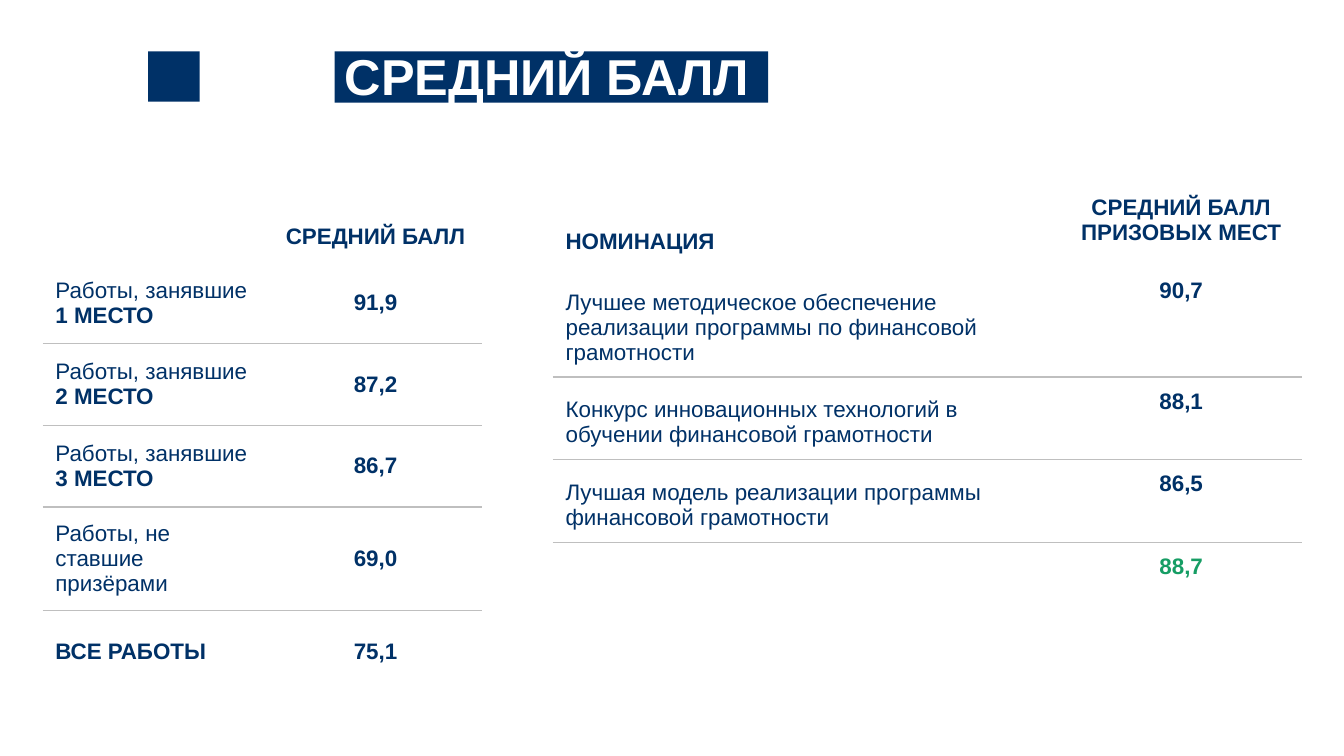
from lxml import etree
from pptx import Presentation
from pptx.dml.color import RGBColor
from pptx.enum import shapes, text
from pptx.oxml import ns
from pptx.util import Inches, Pt

NAVY, GREEN, GREY, WHITE = "003167", "169D64", "BFBFBF", "FFFFFF"
MID, LOW, TOP = text.MSO_ANCHOR.MIDDLE, text.MSO_ANCHOR.BOTTOM, text.MSO_ANCHOR.TOP

PLACES = [
    ("", "СРЕДНИЙ БАЛЛ"),
    ("Работы, занявшие \v1 МЕСТО", "91,9"),
    ("Работы, занявшие \v2 МЕСТО", "87,2"),
    ("Работы, занявшие \v3 МЕСТО", "86,7"),
    ("Работы, не ставшие призёрами", "69,0"),
    ("ВСЕ РАБОТЫ", "75,1"),
]
PRIZES = [
    ("НОМИНАЦИЯ", "СРЕДНИЙ БАЛЛ ПРИЗОВЫХ МЕСТ"),
    ("Лучшее методическое обеспечение реализации программы по финансовой грамотности", "90,7"),
    ("Конкурс инновационных технологий в обучении финансовой грамотности", "88,1"),
    ("Лучшая модель реализации программы финансовой грамотности", "86,5"),
    ("", "88,7"),
]


def color(code):
    return RGBColor.from_string(code)


def style(run, size, code, bold):
    font = run.font
    font.name, font.size, font.bold = "Arial", Pt(size), bold
    font.color.rgb = color(code)


def block(slide, box, code):
    """Add a plain filled rectangle."""
    shape = slide.shapes.add_shape(shapes.MSO_SHAPE.RECTANGLE, *map(Inches, box))
    shape.shadow.inherit = False
    shape.fill.solid()
    shape.fill.fore_color.rgb = color(code)
    shape.line.fill.background()
    return shape


def header(slide, left, top):
    block(slide, (left, top, 0.51, 0.5), NAVY)
    title = block(slide, (left + 1.85, top, 4.3, 0.51), NAVY)
    frame = title.text_frame
    frame.text = "СРЕДНИЙ БАЛЛ"
    frame.word_wrap = True
    frame.vertical_anchor = MID
    frame.margin_left = frame.margin_right = Inches(0.1)
    frame.margin_top, frame.margin_bottom = Inches(0.04), 0
    par = frame.paragraphs[0]
    par.alignment = text.PP_ALIGN.LEFT
    par.line_spacing = 0.9
    style(par.runs[0], 36, WHITE, True)


def border(cell, sides):
    """Draw top and bottom edges, given as a tag-to-colour mapping."""
    props = cell._tc.get_or_add_tcPr()
    for spot, (tag, code) in enumerate(sides.items()):
        line = etree.Element(ns.qn("a:" + tag), w=str(Pt(1)))
        fill = etree.SubElement(line, ns.qn("a:solidFill"))
        etree.SubElement(fill, ns.qn("a:srgbClr"), val=code)
        props.insert(spot, line)


def fill_cell(cell, words, anchor, align, code, bold):
    """Write a cell; the part after a line break is always bold."""
    cell.text = words
    cell.vertical_anchor = anchor
    cell.margin_left = cell.margin_right = Inches(0.12)
    cell.margin_top = cell.margin_bottom = Inches(0.12)
    par = cell.text_frame.paragraphs[0]
    par.alignment = align
    for spot, run in enumerate(par.runs):
        style(run, 16, code, bold or spot > 0)


def scores(slide, left, top, widths, heights, rows, anchors, strong, last):
    """Add a two-column table; strong holds the rows with bold labels,
    last is the colour of the final score."""
    count = len(rows)
    frame = slide.shapes.add_table(count, 2, Inches(left), Inches(top),
                                   Inches(sum(widths)), Inches(sum(heights)))
    table = frame.table
    table.first_row = table.horz_banding = False
    for col, width in zip(table.columns, widths):
        col.width = Inches(width)
    aligns = text.PP_ALIGN.LEFT, text.PP_ALIGN.CENTER
    for r, (height, row) in enumerate(zip(heights, rows)):
        table.rows[r].height = Inches(height)
        edges = {"lnT": WHITE if r < 2 else GREY,
                 "lnB": WHITE if r in (0, count - 1) else GREY}
        for c, words in enumerate(row):
            cell = table.cell(r, c)
            cell.fill.background()
            border(cell, edges)
            if words:
                code = last if c and r == count - 1 else NAVY
                anchor = LOW if r == 0 and c == 0 else anchors[c]
                fill_cell(cell, words, anchor, aligns[c], code, c == 1 or r in strong)


def main():
    deck = Presentation()
    deck.slide_width, deck.slide_height = Inches(13.33), Inches(7.5)
    slide = deck.slides.add_slide(deck.slide_layouts[6])
    header(slide, 1.47, 0.51)
    scores(slide, 0.43, 2.1, (2.24, 2.11), (0.5, 0.81, 0.81, 0.81, 1.03, 0.81),
           PLACES, (MID, MID), {5}, NAVY)
    scores(slide, 5.49, 1.82, (5.03, 2.39), (0.82, 1.1, 0.82, 0.82, 0.53),
           PRIZES, (LOW, TOP), {0}, GREEN)
    deck.save("out.pptx")


if __name__ == "__main__":
    main()
